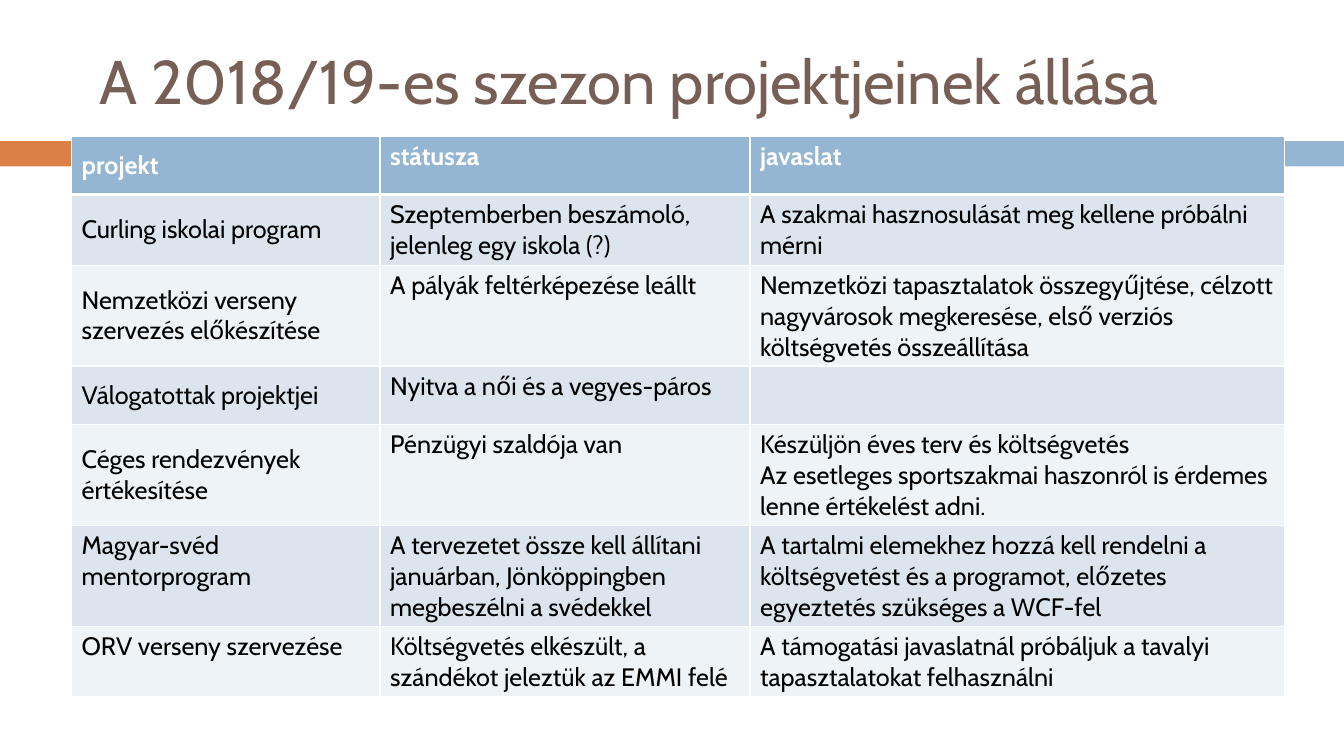
from pptx import Presentation, oxml
from pptx.dml.color import RGBColor
from pptx.enum import shapes, text
from pptx.oxml import ns
from pptx.util import Inches, Pt

WHITE = RGBColor(0xFF, 0xFF, 0xFF)
BLACK = RGBColor(0, 0, 0)
ORANGE = RGBColor(0xDD, 0x80, 0x47)
BLUE = RGBColor(0x94, 0xB6, 0xD2)
BROWN = RGBColor(0x77, 0x5F, 0x55)
BANDS = (RGBColor(0xEE, 0xF3, 0xF7), RGBColor(0xDC, 0xE5, 0xEE))

COLUMNS = (3.06, 3.67, 5.3)
HEIGHTS = (0.58, 0.58, 1, 0.58, 1, 0.58, 0.58)
MIDDLE_ROWS = 5
ROWS = (
    ("projekt", "státusza", "javaslat"),
    ("Curling iskolai program",
     "Szeptemberben beszámoló, jelenleg egy iskola (?)",
     "A szakmai hasznosulását meg kellene próbálni mérni"),
    ("Nemzetközi verseny szervezés előkészítése",
     "A pályák feltérképezése leállt",
     "Nemzetközi tapasztalatok összegyűjtése, célzott nagyvárosok "
     "megkeresése, első verziós költségvetés összeállítása"),
    ("Válogatottak projektjei", "Nyitva a női és a vegyes-páros", ""),
    ("Céges rendezvények értékesítése",
     "Pénzügyi szaldója van",
     "Készüljön éves terv és költségvetés\n"
     "Az esetleges sportszakmai haszonról is érdemes lenne értékelést adni."),
    ("Magyar-svéd mentorprogram",
     "A tervezetet össze kell állítani januárban, Jönköppingben "
     "megbeszélni a svédekkel",
     "A tartalmi elemekhez hozzá kell rendelni a költségvetést és a "
     "programot, előzetes egyeztetés szükséges a WCF-fel"),
    ("ORV verseny szervezése",
     "Költségvetés elkészült, a szándékot jeleztük az EMMI felé",
     "A támogatási javaslatnál próbáljuk a tavalyi tapasztalatokat "
     "felhasználni"),
)


class Deck:
    """Holds the font and current slide, and draws its elements."""

    def __init__(self, prs, font):
        self.s = prs.slides.add_slide(prs.slide_layouts[6])
        self.font = font

    def put_text(self, tf, content, size, color, bold=False):
        tf.text = content
        style = {"name": self.font, "size": Pt(size), "bold": bold}
        for p in tf.paragraphs:
            for r in p.runs:
                r.font.color.rgb = color
                for name, value in style.items():
                    setattr(r.font, name, value)

    def bar(self, box, color):
        sp = self.s.shapes.add_shape(shapes.MSO_SHAPE.RECTANGLE, *map(Inches, box))
        sp.shadow.inherit = False
        sp.fill.solid()
        sp.fill.fore_color.rgb = color
        sp.line.fill.background()

    def title(self, box, content):
        tf = self.s.shapes.add_textbox(*map(Inches, box)).text_frame
        tf.word_wrap = True
        tf.vertical_anchor = text.MSO_ANCHOR.MIDDLE
        self.put_text(tf, content, 44, BROWN)

    def border(self, cell, widths):
        for side, width in widths.items():
            cell._tc.get_or_add_tcPr().append(oxml.parse_xml(
                f'<a:ln{side} {ns.nsdecls("a")} w="{Pt(width)}"><a:solidFill>'
                f'<a:srgbClr val="{WHITE}"/></a:solidFill></a:ln{side}>'))

    def table(self, left, top):
        box = (left, top, sum(COLUMNS), sum(HEIGHTS))
        t = self.s.shapes.add_table(len(ROWS), len(COLUMNS), *map(Inches, box)).table
        for col, width in zip(t.columns, COLUMNS):
            col.width = Inches(width)
        for i, (row, height) in enumerate(zip(t.rows, HEIGHTS)):
            row.height = Inches(height)
            header = i == 0
            for j, cell in enumerate(row.cells):
                self.border(cell, {"L": 1, "R": 1, "T": 3 if i == 1 else 1,
                                   "B": 3 if header else 1})
                cell.fill.solid()
                cell.fill.fore_color.rgb = BLUE if header else BANDS[i % 2]
                if j == 0 and i < MIDDLE_ROWS:
                    cell.vertical_anchor = text.MSO_ANCHOR.MIDDLE
                self.put_text(cell.text_frame, ROWS[i][j], 18,
                              WHITE if header else BLACK, header)


def main():
    prs = Presentation()
    prs.slide_width, prs.slide_height = Inches(13.33), Inches(7.5)
    deck = Deck(prs, "Cabin")
    deck.bar((0, 1.4, 0.78, 0.25), ORANGE)
    deck.bar((0.86, 1.4, 12.47, 0.25), BLUE)
    deck.title((0.89, 0.25, 11.89, 1.08), "A 2018/19-es szezon projektjeinek állása")
    deck.table(0.71, 1.35)
    prs.save("out.pptx")


if __name__ == "__main__":
    main()
